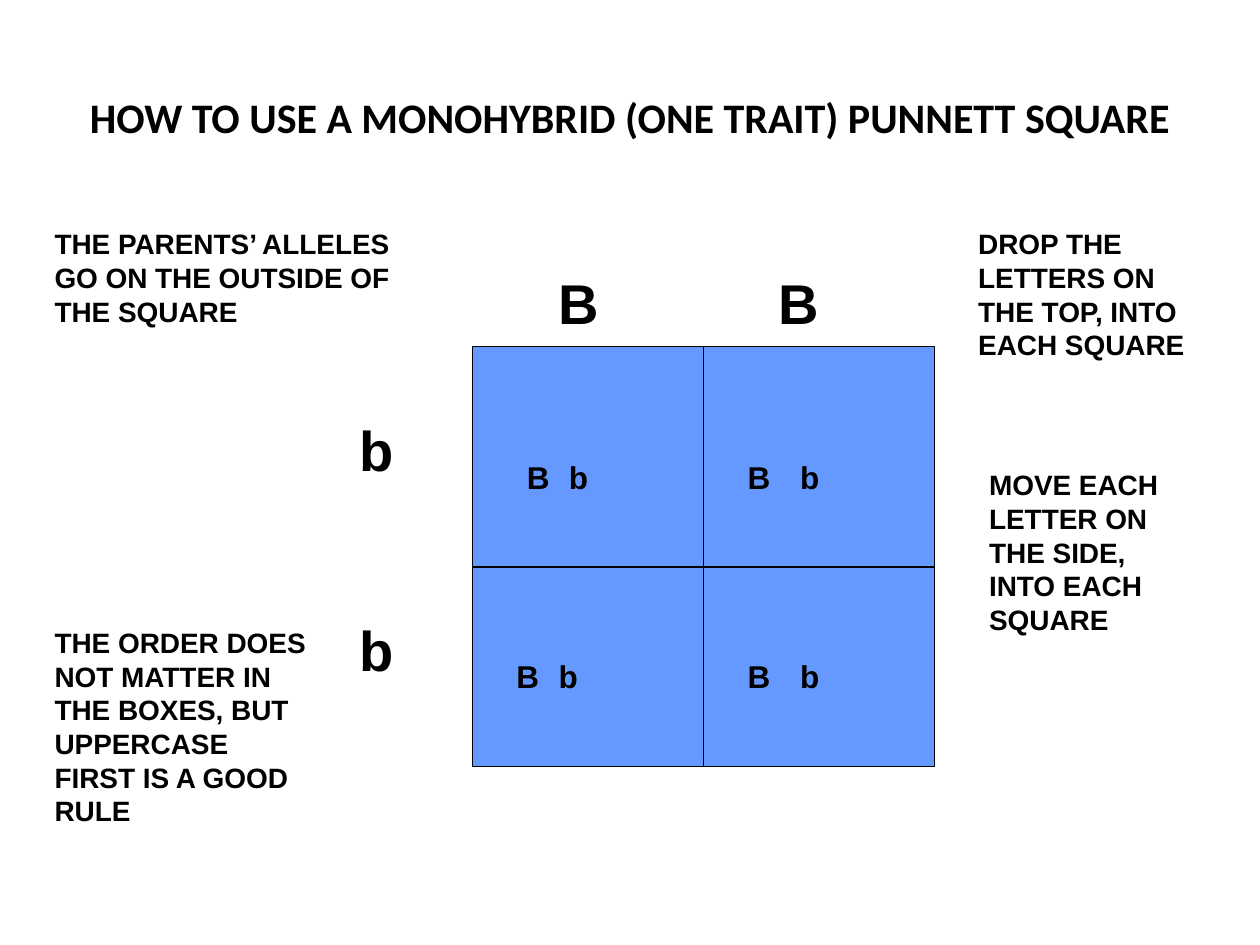
import pptx
import pptx.dml.color
import pptx.enum.shapes
import pptx.enum.text
import pptx.oxml
import pptx.oxml.ns
import pptx.util
from dataclasses import dataclass

Cm = pptx.util.Cm
Pt = pptx.util.Pt

COLORS = {"text": "000000", "line": "000000", "square": "6699FF"}
LINE_WIDTH = 0.75
NOTE_SIZE, PARENT_SIZE, OFFSPRING_SIZE = 16, 32, 18
SQUARE_LEFT, SQUARE_TOP, SQUARE_WIDTH, SQUARE_HEIGHT = 9.53, 6.99, 9.31, 8.47
SQUARE_RIGHT = SQUARE_LEFT + SQUARE_WIDTH
SQUARE_BOTTOM = SQUARE_TOP + SQUARE_HEIGHT
SQUARE_MIDDLE = SQUARE_LEFT + SQUARE_WIDTH / 2
ROW_DIVIDER = 11.43
TOP_ALLELE_Y = 5.29
SIDE_ALLELE_X = 6.99
UPPER_ROW_Y, LOWER_ROW_Y = 9.1, 13.12


@dataclass
class Label:
    text: str
    left: float
    top: float
    width: float
    height: float
    size: int


@dataclass
class Divider:
    start_x: float
    start_y: float
    end_x: float
    end_y: float


NOTES = [
    Label("THE PARENTS’ ALLELES GO ON THE OUTSIDE OF THE SQUARE", 0.85, 4.45, 7.41, 2.29, NOTE_SIZE),
    Label("DROP THE LETTERS ON THE TOP, INTO EACH SQUARE", 19.47, 4.45, 4.87, 2.97, NOTE_SIZE),
    Label("MOVE EACH LETTER ON THE SIDE, INTO EACH SQUARE", 19.69, 9.31, 4.66, 3.66, NOTE_SIZE),
    Label("THE ORDER DOES NOT MATTER IN THE BOXES, BUT UPPERCASE FIRST IS A GOOD RULE",
          0.85, 12.49, 5.72, 4.32, NOTE_SIZE),
]
PARENTS = [
    Label(text, left, top, width, 1.6, PARENT_SIZE)
    for text, left, top, width in [
        ("B", 11.01, TOP_ALLELE_Y, 1.9),
        ("B", 15.45, TOP_ALLELE_Y, 3.39),
        ("b", SIDE_ALLELE_X, 8.26, 1.9),
        ("b", SIDE_ALLELE_X, 12.28, 1.06),
    ]
]
OFFSPRING = [
    Label(text, left, top, width, 1.02, OFFSPRING_SIZE)
    for text, left, top, width in [
        ("B", 10.37, UPPER_ROW_Y, 0.85),
        ("b", 11.22, UPPER_ROW_Y, 1.27),
        ("B", 14.82, UPPER_ROW_Y, 0.85),
        ("b", 15.88, UPPER_ROW_Y, 1.48),
        ("B", 10.16, LOWER_ROW_Y, 1.06),
        ("b", 11.01, LOWER_ROW_Y, 1.69),
        ("B", 14.82, LOWER_ROW_Y, 1.06),
        ("b", 15.88, LOWER_ROW_Y, 1.48),
    ]
]


def color(name: str) -> pptx.dml.color.RGBColor:
    return pptx.dml.color.RGBColor.from_string(COLORS[name])


def apply_format(target, values: dict) -> None:
    for name, value in values.items():
        setattr(target, name, value)


def format_font(run, font_name: str, size: int) -> None:
    apply_format(run.font, {"name": font_name, "size": Pt(size), "bold": True})
    run.font.color.rgb = color("text")


def format_line(line) -> None:
    line.color.rgb = color("line")
    line.width = Pt(LINE_WIDTH)


def add_title(slide, text: str) -> None:
    title = slide.shapes.title
    apply_format(title, {"left": Cm(1.27), "top": Cm(0.76), "width": Cm(22.86), "height": Cm(3.18)})
    apply_format(title.text_frame, {
        "word_wrap": True,
        "vertical_anchor": pptx.enum.text.MSO_ANCHOR.MIDDLE,
    })
    paragraph = title.text_frame.paragraphs[0]
    paragraph.alignment = pptx.enum.text.PP_ALIGN.CENTER
    run = paragraph.add_run()
    run.text = text
    format_font(run, "Calibri", 24)


def add_square(slide):
    square = slide.shapes.add_shape(
        pptx.enum.shapes.MSO_SHAPE.RECTANGLE,
        Cm(SQUARE_LEFT), Cm(SQUARE_TOP), Cm(SQUARE_WIDTH), Cm(SQUARE_HEIGHT),
    )
    square.shadow.inherit = False
    square.fill.solid()
    square.fill.fore_color.rgb = color("square")
    format_line(square.line)
    return square


def add_divider(slide, divider: Divider):
    connector = slide.shapes.add_connector(
        pptx.enum.shapes.MSO_CONNECTOR.STRAIGHT,
        Cm(divider.start_x), Cm(divider.start_y), Cm(divider.end_x), Cm(divider.end_y),
    )
    format_line(connector.line)
    properties = connector._element.spPr
    properties.append(pptx.oxml.parse_xml(f"<a:effectLst {pptx.oxml.ns.nsdecls('a')}/>"))
    return connector


def add_label(slide, label: Label) -> None:
    box = slide.shapes.add_textbox(Cm(label.left), Cm(label.top), Cm(label.width), Cm(label.height))
    apply_format(box.text_frame, {
        "word_wrap": True,
        "auto_size": pptx.enum.text.MSO_AUTO_SIZE.SHAPE_TO_FIT_TEXT,
    })
    run = box.text_frame.paragraphs[0].add_run()
    run.text = label.text
    format_font(run, "Arial", label.size)


def main() -> None:
    presentation = pptx.Presentation()
    apply_format(presentation, {"slide_width": Cm(25.4), "slide_height": Cm(19.05)})
    slide = presentation.slides.add_slide(presentation.slide_layouts.get_by_name("Title Only"))
    add_title(slide, "HOW TO USE A MONOHYBRID (ONE TRAIT) PUNNETT SQUARE")

    square = add_square(slide)
    column_divider = add_divider(slide, Divider(SQUARE_MIDDLE, SQUARE_TOP, SQUARE_MIDDLE, SQUARE_BOTTOM))
    column_divider.begin_connect(square, 0)
    column_divider.end_connect(square, 2)
    add_divider(slide, Divider(SQUARE_LEFT, ROW_DIVIDER, SQUARE_RIGHT, ROW_DIVIDER))
    add_divider(slide, Divider(SQUARE_RIGHT, 15.03, SQUARE_RIGHT, 7.83))

    for label in NOTES + PARENTS + OFFSPRING:
        add_label(slide, label)
    presentation.save("out.pptx")


if __name__ == "__main__":
    main()
